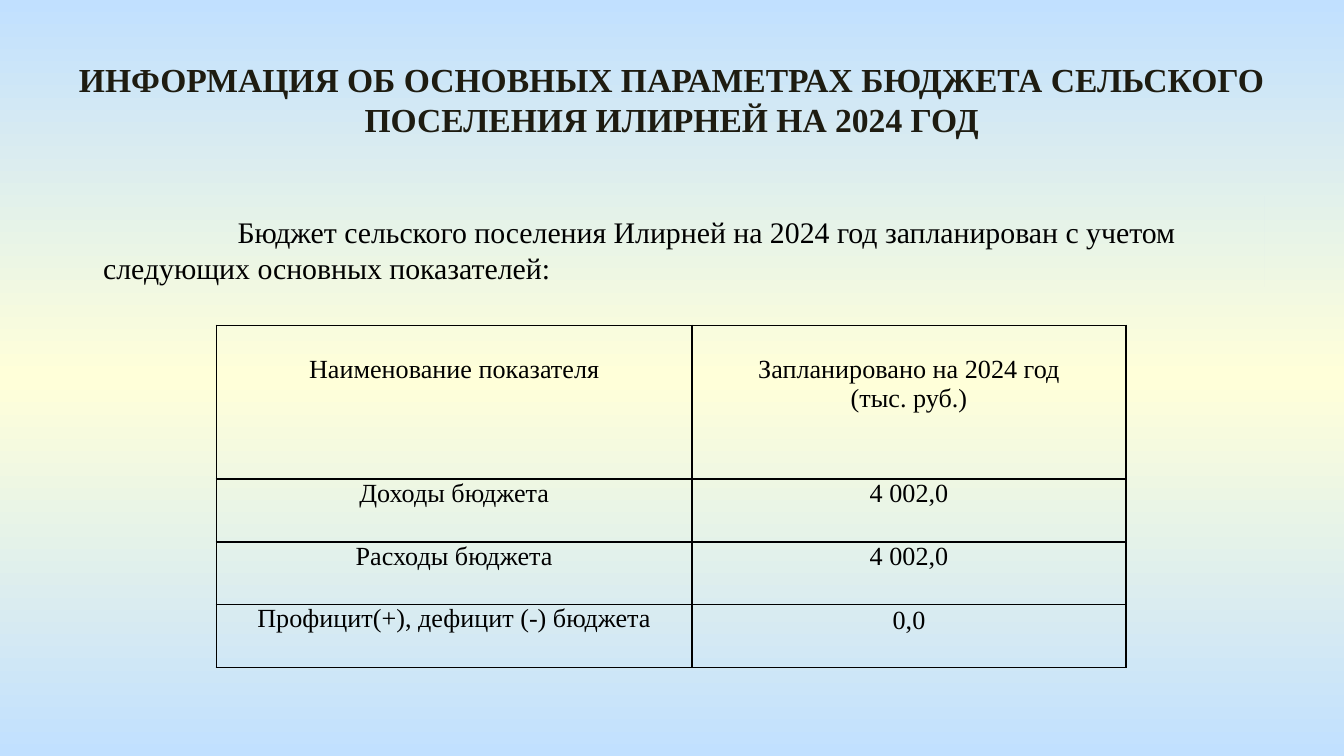
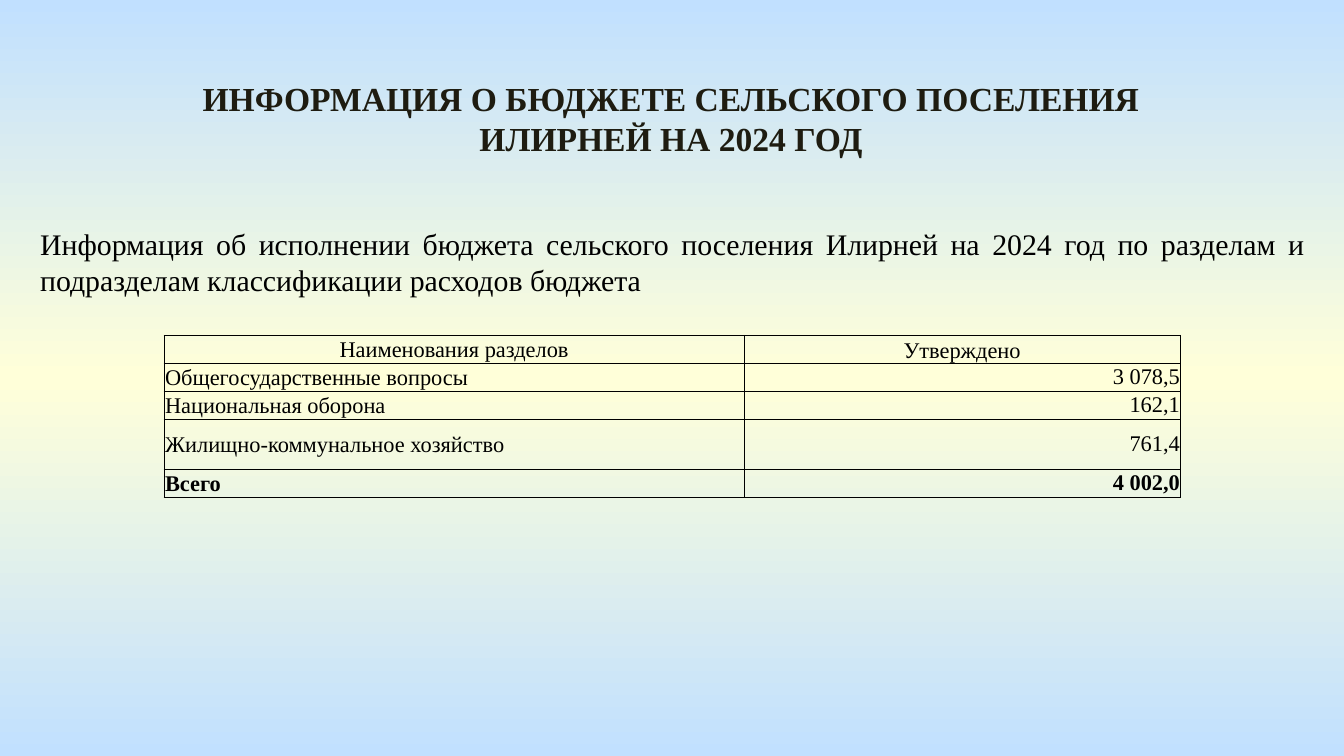
from copy import deepcopy

from lxml.etree import SubElement
from pptx import Presentation
from pptx.dml.color import RGBColor
from pptx.enum.shapes import MSO_SHAPE
from pptx.enum.text import MSO_ANCHOR, MSO_AUTO_SIZE, PP_ALIGN
from pptx.oxml.ns import qn
from pptx.util import Cm, Pt

FONT = "Times New Roman"
BLACK = "000000"
DARK = "1E1C11"
SKY = "C1E0FF"
CREAM = "FFFFD9"
LEFT, MID, RIGHT, JUST = PP_ALIGN.LEFT, PP_ALIGN.CENTER, PP_ALIGN.RIGHT, PP_ALIGN.JUSTIFY


def paint(color, tone):
    color.rgb = RGBColor.from_string(tone)


def write(frame, text, size, align, tone=BLACK, bold=False):
    frame.word_wrap = True
    for i, line in enumerate(text.split("\n")):
        para = frame.add_paragraph() if i else frame.paragraphs[0]
        para.text = line
        para.alignment = align
        para.font.name = FONT
        para.font.size = Pt(size)
        para.font.bold = bold
        paint(para.font.color, tone)


def add_page(deck):
    page = deck.slides.add_slide(deck.slide_layouts[6])
    fill = page.background.fill
    fill.gradient()
    fill.gradient_angle = 270
    for stop, place in zip(fill.gradient_stops, (0, 1)):
        paint(stop.color, SKY)
        stop.position = place
    stops = page.element.find(".//" + qn("a:gsLst"))
    stops.insert(1, deepcopy(stops[0]))
    core = fill.gradient_stops[1]
    paint(core.color, CREAM)
    core.position = 0.5
    return page


def add_text(page, box, *style):
    shape = page.shapes.add_textbox(*map(Cm, box))
    write(shape.text_frame, *style)
    shape.text_frame.auto_size = MSO_AUTO_SIZE.SHAPE_TO_FIT_TEXT


def add_title(page, box, text):
    add_text(page, box, text, 18, MID, DARK, True)


def add_lead(page, box, text):
    shape = page.shapes.add_shape(MSO_SHAPE.RECTANGLE, *map(Cm, box))
    shape.shadow.inherit = False
    shape.line.fill.background()
    shape.element.set("useBgFill", "1")
    frame = shape.text_frame
    frame.vertical_anchor = MSO_ANCHOR.TOP
    frame.margin_top = Cm(0.33)
    write(frame, text, 16, LEFT)
    props = frame.paragraphs[0]._p.get_or_add_pPr()
    props.set("indent", str(Cm(2.54)))


def edge(cell, width):
    props = cell._tc.get_or_add_tcPr()
    for side in "LRTB":
        line = SubElement(props, qn("a:ln" + side), w=str(Pt(width)))
        fill = SubElement(line, qn("a:solidFill"))
        SubElement(fill, qn("a:srgbClr"), val=BLACK)


def pad(cell, side, top):
    cell.margin_left = cell.margin_right = Cm(side)
    cell.margin_top = Cm(top)
    cell.margin_bottom = 0


def add_grid(page, spot, cols, rows, data, size, line, aligns, pads, anchor):
    box = (*spot, sum(cols), sum(rows))
    grid = page.shapes.add_table(len(rows), len(cols), *map(Cm, box)).table
    grid.first_row = grid.horz_banding = False
    for col, width in zip(grid.columns, cols):
        col.width = Cm(width)
    for r, (row, high) in enumerate(zip(grid.rows, rows)):
        row.height = Cm(high)
        for c, cell in enumerate(row.cells):
            edge(cell, line)
            cell.fill.background()
            pad(cell, *pads[c])
            cell.vertical_anchor = anchor
            bold = data[r][0] == "Всего"
            write(cell.text_frame, data[r][c], size, aligns[c] if r else MID, BLACK, bold)
    return grid


def add_plan(deck):
    page = add_page(deck)
    add_lead(page, (1.7, 3.71, 22.2, 1.7),
             "Бюджет сельского поселения Илирней на 2024 год запланирован "
             "с учетом следующих основных показателей:")
    add_title(page, (0.89, 0.99, 23.62, 1.8),
              "ИНФОРМАЦИЯ ОБ ОСНОВНЫХ ПАРАМЕТРАХ БЮДЖЕТА СЕЛЬСКОГО "
              "ПОСЕЛЕНИЯ ИЛИРНЕЙ НА 2024 ГОД")
    data = [
        ("Наименование показателя", "Запланировано на 2024 год\n(тыс. руб.)"),
        ("Доходы бюджета", "4 002,0"),
        ("Расходы бюджета", "4 002,0"),
        ("Профицит(+), дефицит (-) бюджета", "0,0"),
    ]
    grid = add_grid(page, (4.09, 6.15), (8.99, 8.2), (2.9, 1.19, 1.19, 1.19), data,
                    14, 1, (MID, MID), ((0.18, 0), (0.18, 0)), MSO_ANCHOR.TOP)
    for cell in grid.rows[0].cells:
        pad(cell, 0.18, 0.57)
    pad(grid.cell(3, 1), 0.02, 0.02)


def add_split(deck):
    page = add_page(deck)
    add_text(page, (0.51, 4.14, 24.41, 1.63),
             "Информация об исполнении бюджета сельского поселения Илирней на 2024 год "
             "по разделам и подразделам классификации расходов бюджета", 16, JUST)
    data = [
        ("Наименования разделов", "Утверждено"),
        ("Общегосударственные вопросы", "3 078,5"),
        ("Национальная оборона", "162,1"),
        ("Жилищно-коммунальное хозяйство", "761,4"),
        ("Всего", "4 002,0"),
    ]
    grid = add_grid(page, (3.1, 6.34), (10.97, 8.23), (0.5, 0.5, 0.5, 0.94, 0.5), data,
                    12, 0.5, (LEFT, RIGHT), ((0.02, 0.02), (0, 0)), MSO_ANCHOR.MIDDLE)
    head = grid.cell(0, 1)
    pad(head, 0.02, 0.02)
    head.vertical_anchor = MSO_ANCHOR.BOTTOM
    add_title(page, (0.99, 1.35, 23.39, 1.8),
              "ИНФОРМАЦИЯ О БЮДЖЕТЕ СЕЛЬСКОГО ПОСЕЛЕНИЯ\nИЛИРНЕЙ НА 2024 ГОД")


def main():
    deck = Presentation()
    deck.slide_width, deck.slide_height = Cm(25.4), Cm(14.29)
    add_plan(deck)
    add_split(deck)
    deck.save("out.pptx")


if __name__ == "__main__":
    main()
